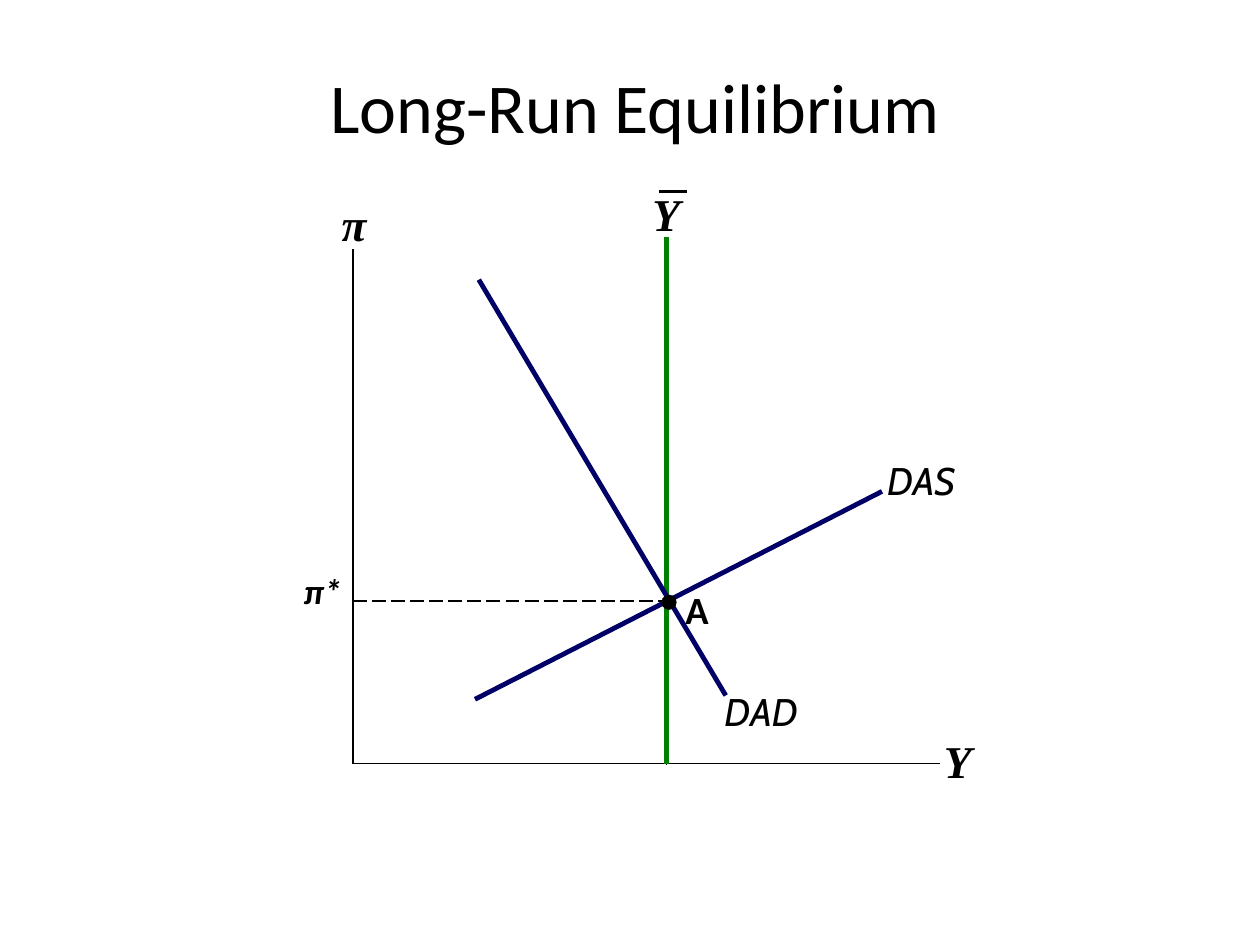
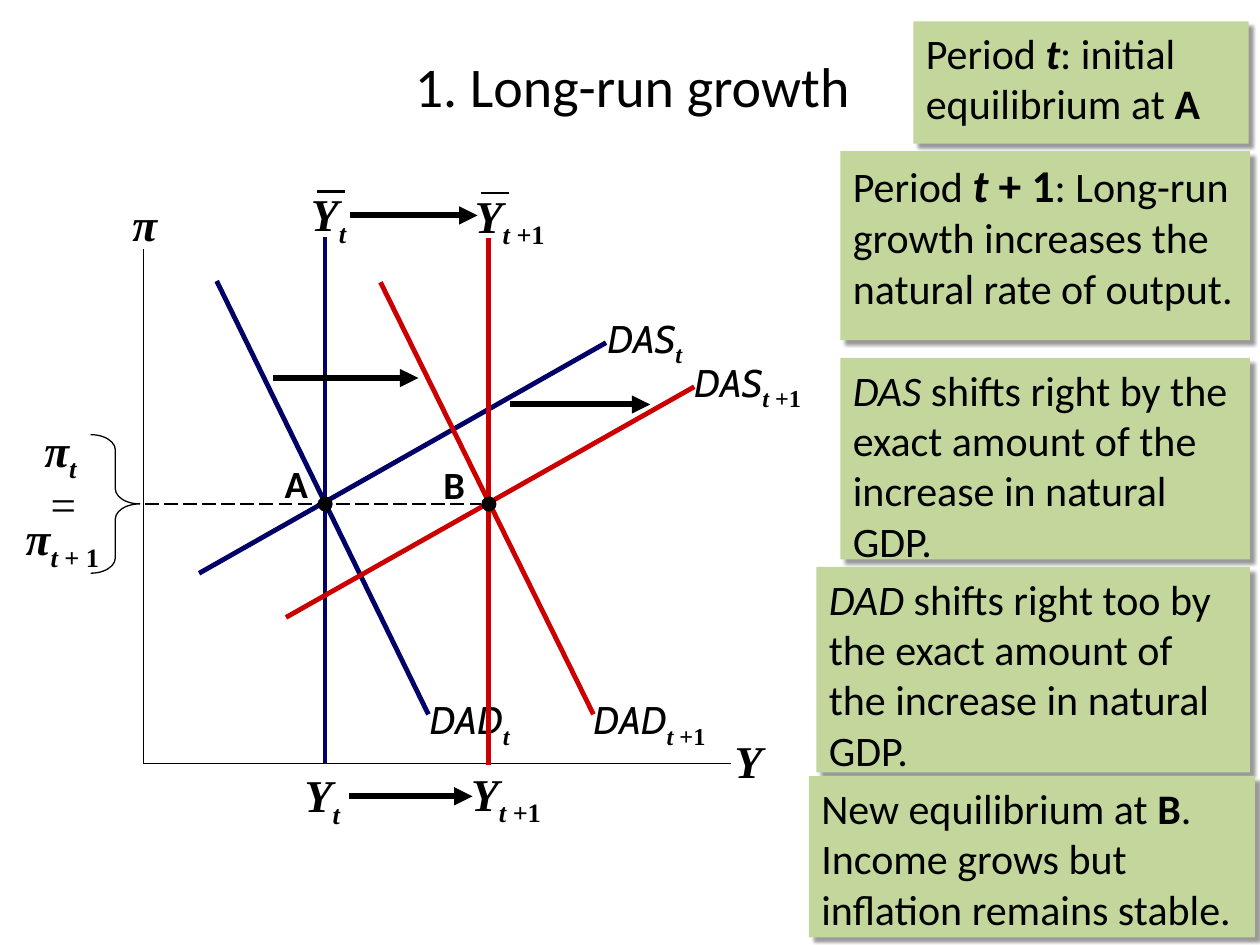
from lxml.etree import SubElement
from pptx import Presentation
from pptx.dml.color import RGBColor
from pptx.enum.dml import MSO_LINE
from pptx.enum.shapes import MSO_CONNECTOR, MSO_SHAPE
from pptx.enum.text import MSO_ANCHOR, MSO_AUTO_SIZE, PP_ALIGN
from pptx.oxml.ns import qn
from pptx.util import Emu, Pt

PX = 9144  # 100 px to the inch
BLACK, NAVY, RED, GREEN, NOTE = "000000", "000066", "CC0000", "008000", "C3D69B"
SANS, SERIF, CURVE = "Calibri", "Times New Roman", "Cabin"
LEFT, CENTER, RIGHT = PP_ALIGN.LEFT, PP_ALIGN.CENTER, PP_ALIGN.RIGHT


def px(*values):
    return [Emu(v * PX) for v in values]


def rgb(color):
    return RGBColor.from_string(color)


class Deck:
    def __init__(self):
        self.prs = Presentation()
        self.prs.slide_width, self.prs.slide_height = px(1000, 750)
        self.s = None

    def slide(self, title, size, box):
        self.s = self.prs.slides.add_slide(self.prs.slide_layouts[5])
        sp = self.s.shapes.title
        sp.left, sp.top, sp.width, sp.height = px(*box)
        tf = sp.text_frame
        tf.auto_size = MSO_AUTO_SIZE.NONE
        tf.vertical_anchor = MSO_ANCHOR.MIDDLE
        self.set_text(tf, [(title, "")], size, SANS, CENTER)

    def set_text(self, tf, runs, size, font, align=LEFT):
        """Fill tf with (text, flags[, size, font]) runs; flags: b bold, i italic, s subscript."""
        tf.word_wrap = True
        p = tf.paragraphs[0]
        p.alignment = align
        p.font.size, p.font.name = Pt(size), font
        p.font.color.rgb = rgb(BLACK)
        for text, flags, *own in runs:
            r = p.add_run()
            r.text = text
            r.font.bold, r.font.italic = "b" in flags, "i" in flags
            if own:
                r.font.size, r.font.name = Pt(own[0]), own[1]
            if "s" in flags:
                r.font._element.set("baseline", "-25000")

    def label(self, x, y, w, h, runs, size=26, font=SERIF, align=LEFT, insets=None):
        tf = self.s.shapes.add_textbox(*px(x, y, w, h)).text_frame
        if insets:
            tf.margin_left, tf.margin_top, tf.margin_right, tf.margin_bottom = px(*insets)
        self.set_text(tf, runs, size, font, align)

    def line(self, x1, y1, x2, y2, color=BLACK, width=1, dashed=False, arrow=False):
        c = self.s.shapes.add_connector(MSO_CONNECTOR.STRAIGHT, *px(x1, y1, x2, y2))
        c.line.color.rgb, c.line.width = rgb(color), Pt(width)
        if dashed:
            c.line.dash_style = MSO_LINE.LONG_DASH
        if arrow:
            SubElement(c.line._get_or_add_ln(), qn("a:tailEnd"), type="triangle")
        SubElement(c._element.spPr, qn("a:effectLst"))

    def arrow(self, x1, x2, y):
        self.line(x1, y, x2, y, width=3.5, arrow=True)

    def shape(self, kind, x, y, w, h, fill=None):
        sp = self.s.shapes.add_shape(kind, *px(x, y, w, h))
        sp.shadow.inherit = False
        if fill:
            sp.fill.solid()
            sp.fill.fore_color.rgb = rgb(fill)
        else:
            sp.fill.background()
        sp.line.fill.background()
        return sp

    def note(self, x, y, w, h, runs):
        sp = self.shape(MSO_SHAPE.RECTANGLE, x, y, w, h, NOTE)
        effects = sp._element.spPr.find(qn("a:effectLst"))
        shadow = SubElement(effects, qn("a:outerShdw"), blurRad=str(Pt(2)), dist=str(Pt(4)),
                            dir="2700000", algn="tl", rotWithShape="0")
        color = SubElement(shadow, qn("a:srgbClr"), val=BLACK)
        SubElement(color, qn("a:alpha"), val="40000")
        sp.text_frame.vertical_anchor = MSO_ANCHOR.TOP
        self.set_text(sp.text_frame, runs, 24, SANS)

    def brace(self, x, y, w, h):
        sp = self.shape(MSO_SHAPE.RIGHT_BRACE, x, y, w, h)
        sp.adjustments[0] = 0.31
        sp.line.color.rgb, sp.line.width = rgb(BLACK), Pt(0.75)

    def axes(self, x):
        """Inflation and output axes that meet at x."""
        self.line(x, 198, x, 606)
        self.line(x, 606, x + 466, 606)
        self.label(x + 469, 582, 45, 49, [("Y", "bi")], insets=(0, 0, 0, 5))
        self.label(x - 28, 151, 58, 54, [("π", "bi")], align=CENTER)

    def natural_output(self, x, color, period=(), top=188):
        """Vertical line at x under a Y with a bar."""
        self.line(x, top, x, top + 418, color, 2.75)
        self.label(x - 21, top - 45, 94, 54, [("Y", "bi"), *period])
        self.line(x - 6, top - 36, x + 16, top - 36, width=1.25)

    def curve(self, name, ends, color, label_box, period=()):
        self.line(*ends, color, 2.75)
        subs = [(text, flags, 24, SERIF) for text, flags in period]
        self.label(*label_box, 47, [(name, "i"), *subs], 22, CURVE, insets=(0, 0, 0, 10))

    def point(self, name, x, y, label_x, label_y):
        """Dot centred on x, y with its letter."""
        self.shape(MSO_SHAPE.OVAL, x - 6, y - 6, 12, 12, BLACK)
        self.label(label_x, label_y, 41, 47, [(name, "b")], 22, SANS)


def long_run_equilibrium(d):
    d.slide("Long-Run Equilibrium", 40, (72, 26, 864, 116))
    d.line(280, 477, 529, 477, dashed=True)
    d.line(529, 477, 529, 607, dashed=True)
    d.label(202, 447, 79, 44, [("π*", "bi")], 20, SANS, RIGHT)
    d.axes(280)
    d.curve("DAS", (377, 555, 700, 390), NAVY, (704, 363, 114))
    d.natural_output(529, GREEN)
    d.curve("DAD", (380, 222, 576, 552), NAVY, (575, 546, 136))
    d.point("A", 531, 478, 534, 460)


def long_run_growth(d):
    now = [("t", "bis")]
    later = [("t +", "bis"), ("1", "bs")]
    curve_later = [("t", "bis"), (" +1", "bs")]
    pi_later = [("t ", "bis"), ("+ 1", "bs")]
    shift = " the exact amount of the increase in natural GDP."

    d.slide("1. Long-run growth", 32, (51, 26, 902, 83))
    d.axes(114)
    d.curve("DAS", (158, 455, 481, 272), NAVY, (482, 247, 75), now)
    d.natural_output(258, NAVY, now)
    d.curve("DAD", (172, 223, 340, 567), NAVY, (341, 550, 139), now)
    d.line(115, 400, 382, 400, dashed=True)
    d.point("A", 258, 400, 216, 360)

    d.natural_output(388, RED, later, top=189)
    d.curve("DAS", (227, 490, 551, 307), RED, (551, 282, 100), curve_later)
    d.curve("DAD", (302, 224, 471, 567), RED, (471, 550, 99), curve_later)
    d.point("B", 388, 400, 342, 361)

    d.label(232, 604, 58, 54, [("Y", "bi"), *now])
    d.label(364, 603, 85, 54, [("Y", "bi"), *later])
    for x1, x2, y in [(278, 379, 171), (217, 332, 300), (405, 516, 321), (277, 375, 632)]:
        d.arrow(x1, x2, y)

    d.label(13, 330, 70, 54, [("π", "bi"), *now], align=CENTER)
    d.label(28, 373, 36, 54, [("=", "i")], align=CENTER)
    d.label(5, 400, 89, 54, [("π", "bi"), *pi_later], align=CENTER)
    d.brace(72, 345, 39, 110)

    d.note(725, 17, 266, 97, [("Period ", ""), ("t", "bi"), (": initial equilibrium at ", ""),
                              ("A", "b")])
    d.note(667, 120, 325, 150, [
        ("Period ", ""), ("t", "bi", 26, SANS), (" + 1", "b", 26, SANS),
        (": Long-run growth increases the natural rate of output.", "")])
    d.note(667, 284, 325, 160, [("DAS", "i"), (" shifts right by" + shift, "")])
    d.note(648, 450, 344, 163, [("DAD", "i"), (" shifts right too by" + shift, "")])
    d.note(642, 616, 354, 128, [("New equilibrium at ", ""), ("B", "b"),
                                (". Income grows but inflation remains stable.", "")])


def main():
    d = Deck()
    long_run_equilibrium(d)
    long_run_growth(d)
    d.prs.save("out.pptx")


if __name__ == "__main__":
    main()
